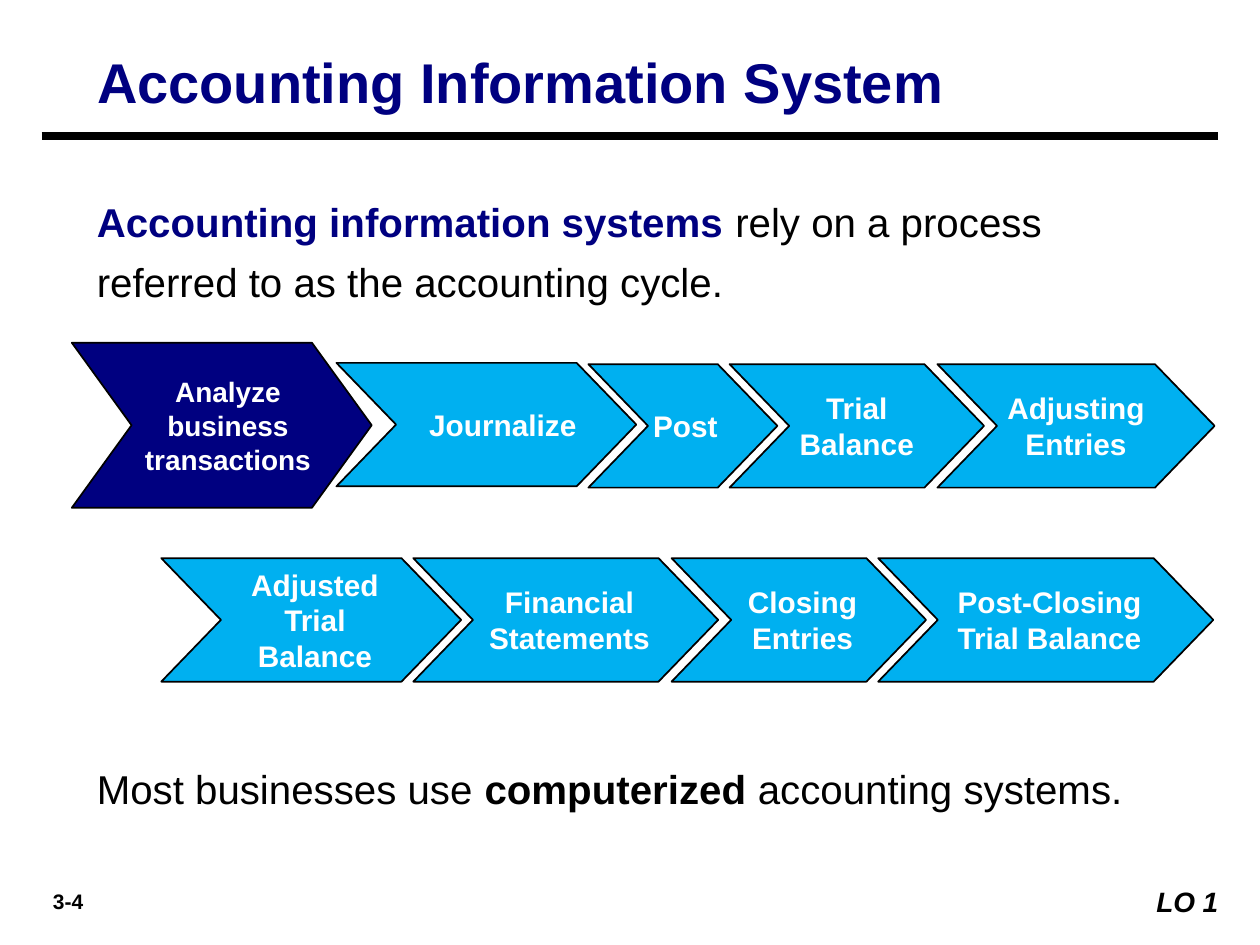
from dataclasses import dataclass

from lxml import etree
from pptx import Presentation
from pptx.dml.color import RGBColor
from pptx.enum.shapes import MSO_CONNECTOR, MSO_SHAPE
from pptx.enum.text import MSO_ANCHOR, PP_ALIGN
from pptx.oxml.ns import qn
from pptx.util import Inches, Pt

CHEVRON = MSO_SHAPE.CHEVRON
RECTANGLE = MSO_SHAPE.RECTANGLE
STRAIGHT = MSO_CONNECTOR.STRAIGHT
LEFT, CENTER, RIGHT = PP_ALIGN.LEFT, PP_ALIGN.CENTER, PP_ALIGN.RIGHT
TOP, MIDDLE = MSO_ANCHOR.TOP, MSO_ANCHOR.MIDDLE

COLORS = {"navy": "000080", "sky": "00B0F0", "black": "000000", "white": "FFFFFF"}
FONT = "Arial"
STEP_HEIGHT = 0.98


@dataclass
class Step:
    text: str
    left: float
    top: float
    width: float
    height: float = STEP_HEIGHT
    point: float = 0.483
    fill: str = "sky"
    size: int = 17
    align: PP_ALIGN = CENTER
    left_inset: float = 0
    indent: float = 0


@dataclass
class Phrase:
    text: str
    color: str = "black"
    bold: bool = False


FIRST_ROW, SECOND_ROW = 2.89, 4.43
STEPS = [
    Step("Analyze business transactions", 0.57, 2.72, 2.38, 1.31, 0.362, "navy", 16,
         left_inset=0.1),
    Step("Journalize", 2.67, 2.88, 2.38, align=RIGHT, indent=0.06),
    Step("Post", 4.67, FIRST_ROW, 1.5, align=RIGHT),
    Step("Trial Balance", 5.79, FIRST_ROW, 2.02),
    Step("Adjusting Entries", 7.44, FIRST_ROW, 2.2),
    Step("Adjusted Trial Balance", 1.28, SECOND_ROW, 2.38, indent=0.06),
    Step("Financial Statements", 3.28, SECOND_ROW, 2.42, indent=0.06),
    Step("Closing Entries", 5.33, SECOND_ROW, 2.02, indent=0.06),
    Step("Post-Closing Trial Balance", 6.97, SECOND_ROW, 2.66, indent=0.06),
]


def rgb(name: str) -> RGBColor:
    return RGBColor.from_string(COLORS[name])


def format_paragraph(paragraph, size: int, color: str, align: PP_ALIGN,
                     bold: bool = True) -> None:
    paragraph.alignment = align
    font = paragraph.font
    font.name, font.size, font.bold = FONT, Pt(size), bold
    font.color.rgb = rgb(color)


def add_title(slide, text: str) -> None:
    title = slide.shapes.title
    title.left, title.top = Inches(0.67), Inches(0.33)
    title.width, title.height = Inches(9), Inches(0.61)
    title.text_frame.text = text
    title.text_frame.vertical_anchor = TOP
    format_paragraph(title.text_frame.paragraphs[0], 32, "navy", LEFT)


def add_rule(slide, left: float, right: float, y: float) -> None:
    rule = slide.shapes.add_connector(
        STRAIGHT, Inches(left), Inches(y), Inches(right), Inches(y))
    rule.line.color.rgb = rgb("black")
    rule.line.width = Pt(4.5)
    etree.SubElement(rule._element.spPr, qn("a:effectLst"))


def add_statement(slide, top: float, height: float, phrases: list[Phrase]) -> None:
    box = slide.shapes.add_textbox(
        Inches(0.67), Inches(top), Inches(8.5), Inches(height))
    box.text_frame.word_wrap = True
    paragraph = box.text_frame.paragraphs[0]
    paragraph.line_spacing = 1.25
    paragraph.space_before = Pt(12)
    paragraph.font.name, paragraph.font.size = FONT, Pt(23)
    for phrase in phrases:
        run = paragraph.add_run()
        run.text = phrase.text
        run.font.bold = phrase.bold
        run.font.color.rgb = rgb(phrase.color)


def add_step(slide, step: Step) -> None:
    chevron = slide.shapes.add_shape(
        CHEVRON, Inches(step.left), Inches(step.top),
        Inches(step.width), Inches(step.height))
    chevron.adjustments[0] = step.point
    chevron.shadow.inherit = False
    chevron.fill.solid()
    chevron.fill.fore_color.rgb = rgb(step.fill)
    chevron.line.color.rgb = rgb("black")
    chevron.line.width = Pt(1)
    frame = chevron.text_frame
    frame.word_wrap = True
    frame.vertical_anchor = MIDDLE
    frame.margin_left, frame.margin_right = Inches(step.left_inset), 0
    frame.text = step.text
    paragraph = frame.paragraphs[0]
    format_paragraph(paragraph, step.size, "white", step.align)
    if step.indent:
        paragraph._p.get_or_add_pPr().set("marL", str(Inches(step.indent)))


def add_page_number(slide, text: str) -> None:
    box = slide.shapes.add_textbox(Inches(0.08), Inches(7), Inches(0.92), Inches(0.3))
    box.text_frame.word_wrap = True
    box.text_frame.text = text
    format_paragraph(box.text_frame.paragraphs[0], 12, "black", CENTER)


def add_objective(slide, text: str) -> None:
    label = slide.shapes.add_shape(
        RECTANGLE, Inches(9), Inches(6.97), Inches(0.83), Inches(0.37))
    label.shadow.inherit = False
    label.fill.solid()
    label.fill.fore_color.rgb = rgb("white")
    label.line.fill.background()
    label.text_frame.word_wrap = True
    label.text_frame.vertical_anchor = TOP
    label.text_frame.text = text
    paragraph = label.text_frame.paragraphs[0]
    format_paragraph(paragraph, 16, "black", RIGHT)
    paragraph.font.italic = True


def main() -> None:
    presentation = Presentation()
    presentation.slide_width, presentation.slide_height = Inches(10), Inches(7.5)
    slide = presentation.slides.add_slide(presentation.slide_layouts[5])

    add_page_number(slide, "3-4")
    add_statement(slide, 1.42, 1.02, [
        Phrase("Accounting information systems ", "navy", True),
        Phrase("rely on a process referred to as the accounting cycle."),
    ])
    add_title(slide, "Accounting Information System")
    add_rule(slide, 0.33, 9.67, 1.08)
    for step in STEPS:
        add_step(slide, step)
    add_statement(slide, 5.92, 0.58, [
        Phrase("Most businesses use "),
        Phrase("computerized", bold=True),
        Phrase(" accounting systems."),
    ])
    add_objective(slide, "LO 1 ")
    presentation.save("out.pptx")


if __name__ == "__main__":
    main()
